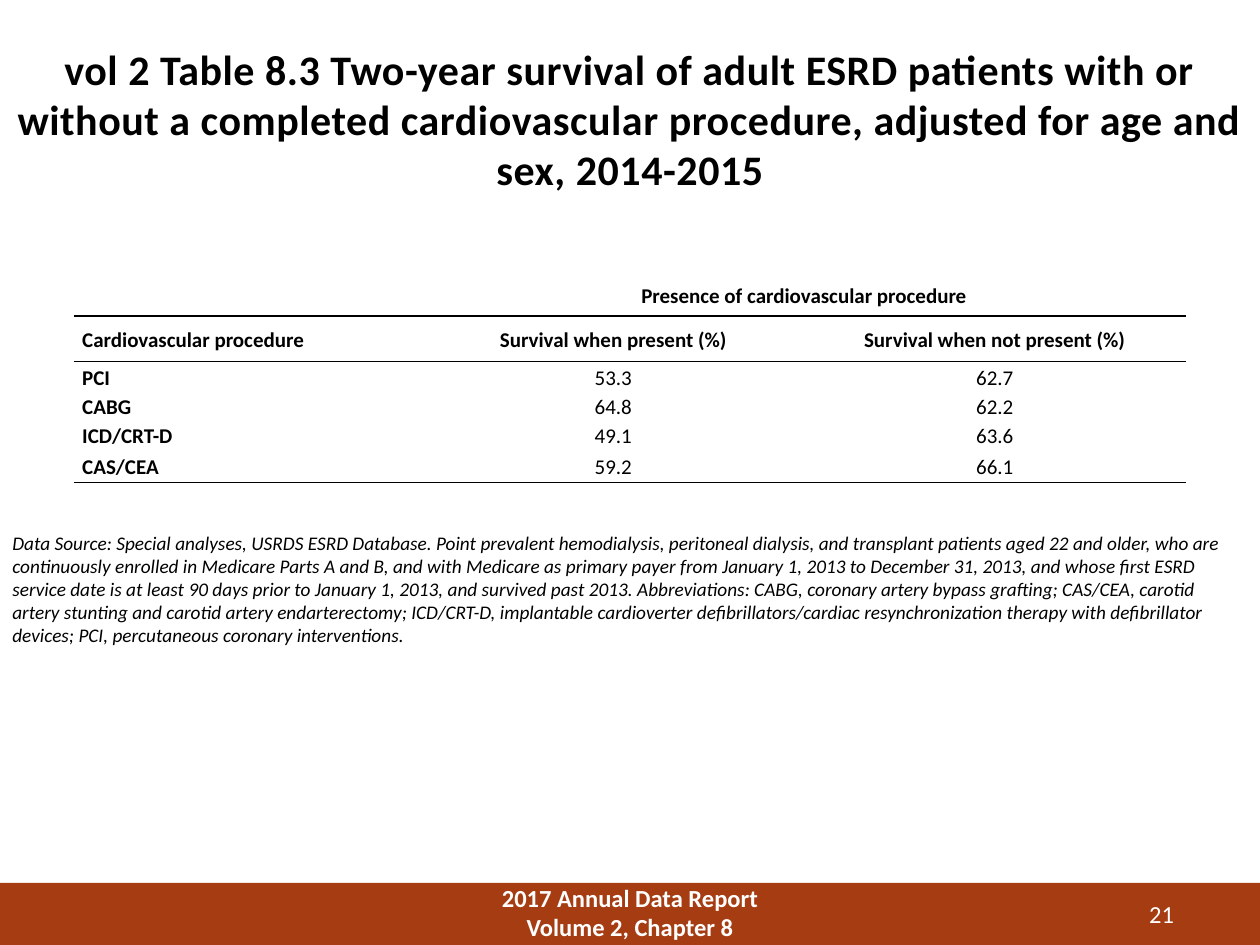
from dataclasses import dataclass

from lxml.etree import SubElement
from pptx import Presentation
from pptx.dml.color import RGBColor
from pptx.enum.shapes import MSO_SHAPE as Preset
from pptx.enum.text import MSO_ANCHOR as Anchor, MSO_AUTO_SIZE as AutoSize, PP_ALIGN as Align
from pptx.oxml.ns import qn
from pptx.util import Pt


@dataclass(frozen=True)
class Theme:
    """Colours, font and type sizes of the slide."""
    font: str = "Calibri"
    ink: str = "000000"
    paper: str = "FFFFFF"
    band: str = "A63C12"
    title: float = 24
    footer: float = 14
    table: float = 12
    note: float = 11
    rule: float = 1


class Page:
    """Holds the style and the current slide."""

    def __init__(self, deck, theme):
        """Add a title-only slide to the deck."""
        self.theme = theme
        self.slide = deck.slides.add_slide(deck.slide_layouts[5])

    def add_span(self, para, text, size, color=None, bold=False, italic=False, align=Align.LEFT):
        """Add one formatted run to a paragraph."""
        para.alignment = align
        span = para.add_run()
        span.text = text
        font = span.font
        font.name, font.size, font.bold, font.italic = self.theme.font, Pt(size), bold, italic
        font.color.rgb = RGBColor.from_string(color or self.theme.ink)
        return span

    def title(self, text, left, top, width, height):
        """Fill and place the title placeholder."""
        box = self.slide.shapes.title
        box.left, box.top, box.width, box.height = map(Pt, (left, top, width, height))
        frame = box.text_frame
        frame.auto_size, frame.vertical_anchor = AutoSize.NONE, Anchor.TOP
        para = frame.paragraphs[0]
        para.space_before, para.space_after = Pt(0), Pt(6)
        span = self.add_span(para, text, self.theme.title, bold=True, align=Align.CENTER)
        span._r.get_or_add_rPr().set("spc", "30")

    def band(self, left, top, width, height):
        """Draw a plain coloured rectangle."""
        bar = self.slide.shapes.add_shape(Preset.RECTANGLE, *map(Pt, (left, top, width, height)))
        bar.shadow.inherit = False
        bar.fill.solid()
        bar.fill.fore_color.rgb = RGBColor.from_string(self.theme.band)
        bar.line.fill.background()

    def text(self, lines, left, top, width, height, size, **style):
        """Add a wrapped text box with one paragraph per line."""
        box = self.slide.shapes.add_textbox(*map(Pt, (left, top, width, height)))
        frame = box.text_frame
        frame.word_wrap = True
        for index, line in enumerate(lines):
            para = frame.add_paragraph() if index else frame.paragraphs[0]
            self.add_span(para, line, size, **style)

    def borders(self, cell, ruled):
        """Rule the named edges of a cell and clear the others."""
        properties = cell._tc.get_or_add_tcPr()
        for edge in ("lnL", "lnR", "lnT", "lnB"):
            line = SubElement(properties, qn(f"a:{edge}"), w=str(Pt(self.theme.rule)))
            if edge in ruled:
                fill = SubElement(line, qn("a:solidFill"))
                SubElement(fill, qn("a:srgbClr"), val=self.theme.ink)
            else:
                SubElement(line, qn("a:noFill"))

    def table(self, rows, left, top, widths, heights, header_rows):
        """Add a table with a spanning header and horizontal rules."""
        grid = self.slide.shapes.add_table(
            len(rows), len(widths), *map(Pt, (left, top, sum(widths), sum(heights)))).table
        grid.first_row = grid.horz_banding = False
        for column, width in zip(grid.columns, widths):
            column.width = Pt(width)
        for row, height in zip(grid.rows, heights):
            row.height = Pt(height)
        grid.cell(0, 1).merge(grid.cell(0, 2))
        last = len(rows) - 1
        for y, row in enumerate(rows):
            ruled = {"lnT"} if 0 < y <= header_rows else set()
            if y < header_rows or y == last:
                ruled.add("lnB")
            for x, text in enumerate(row):
                cell = grid.cell(y, x)
                cell.margin_left = cell.margin_right = Pt(5)
                cell.margin_top = cell.margin_bottom = 0
                cell.vertical_anchor = Anchor.MIDDLE
                self.borders(cell, ruled)
                cell.fill.background()
                if text:
                    para = cell.text_frame.paragraphs[0]
                    para.line_spacing = 1.15
                    self.add_span(para, text, self.theme.table, bold=y < header_rows or x == 0,
                                  align=Align.CENTER if x else Align.LEFT)


TITLE = ("vol 2 Table 8.3 Two-year survival of adult ESRD patients with or without a completed "
         "cardiovascular procedure, adjusted for age and sex, 2014-2015")
SURVIVAL = [
    ("", "Presence of cardiovascular procedure", ""),
    ("Cardiovascular procedure", "Survival when present (%)", "Survival when not present (%)"),
    ("PCI", "53.3", "62.7"),
    ("CABG", "64.8", "62.2"),
    ("ICD/CRT-D", "49.1", "63.6"),
    ("CAS/CEA", "59.2", "66.1"),
]
NOTE = ("Data Source: Special analyses, USRDS ESRD Database. Point prevalent hemodialysis, "
        "peritoneal dialysis, and transplant patients aged 22 and older, who are continuously "
        "enrolled in Medicare Parts A and B, and with Medicare as primary payer from January 1, "
        "2013 to December 31, 2013, and whose first ESRD service date is at least 90 days prior "
        "to January 1, 2013, and survived past 2013. Abbreviations: CABG, coronary artery bypass "
        "grafting; CAS/CEA, carotid artery stunting and carotid artery endarterectomy; "
        "ICD/CRT-D, implantable cardioverter defibrillators/cardiac resynchronization therapy "
        "with defibrillator devices; PCI, percutaneous coronary interventions.")


def main():
    """Build and save the slide."""
    deck = Presentation()
    deck.slide_width, deck.slide_height = Pt(720), Pt(540)
    theme = Theme()
    page = Page(deck, theme)
    page.band(0, 504.5, 720, 36)
    page.text(["2017 Annual Data Report", "Volume 2, Chapter 8"], 258, 501, 204, 24,
              theme.footer, color=theme.paper, bold=True, align=Align.CENTER)
    page.text(["21"], 606, 510, 72, 21.6, theme.footer, color=theme.paper, align=Align.RIGHT)
    page.title(TITLE, 0, 21, 720, 90)
    page.table(SURVIVAL, 42, 156, [199.5, 218, 218], [24.5, 26, 15.4, 15.4, 15.4, 19.5], 2)
    page.text([NOTE], 0, 300, 720, 74, theme.note, italic=True)
    deck.save("out.pptx")


if __name__ == "__main__":
    main()
